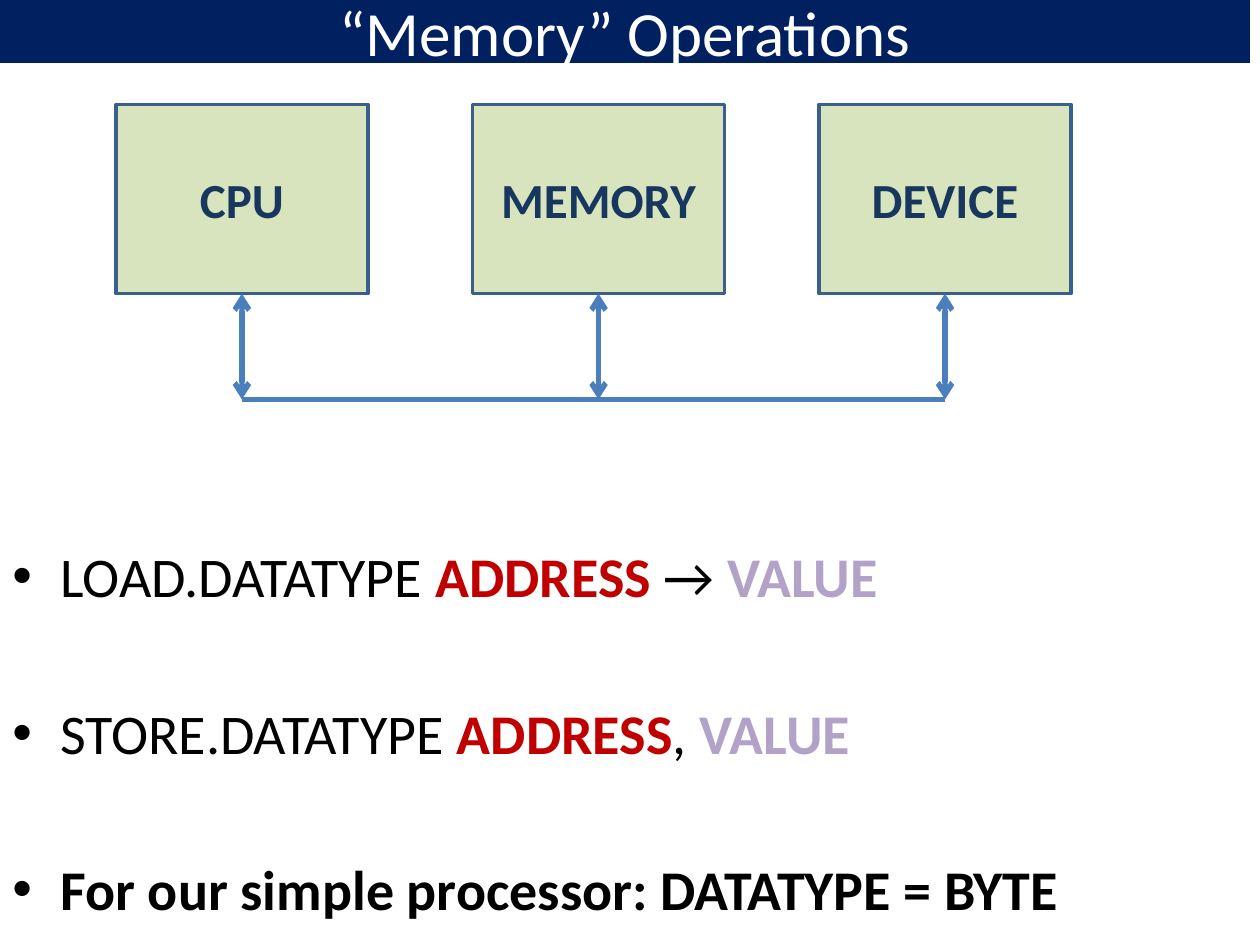
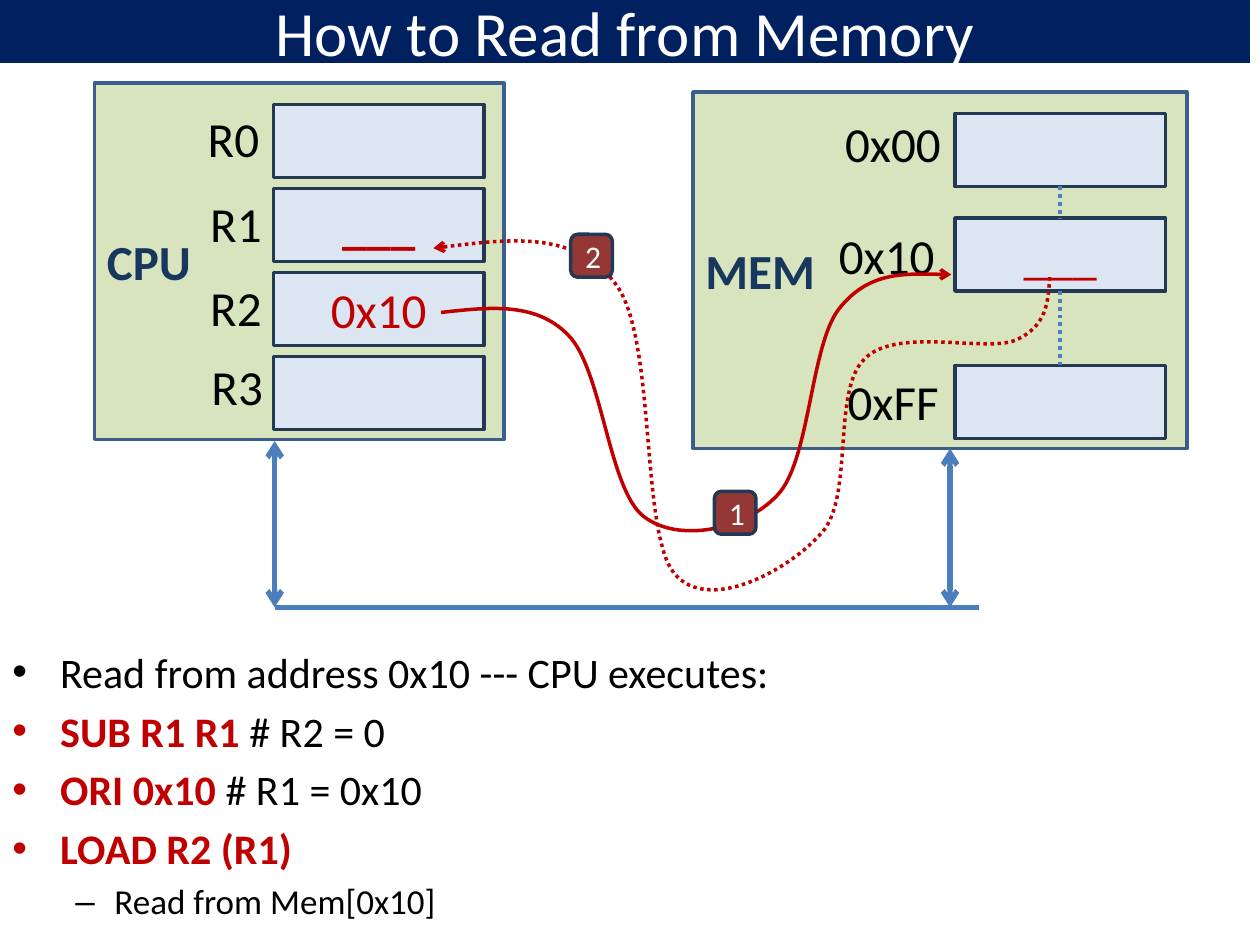
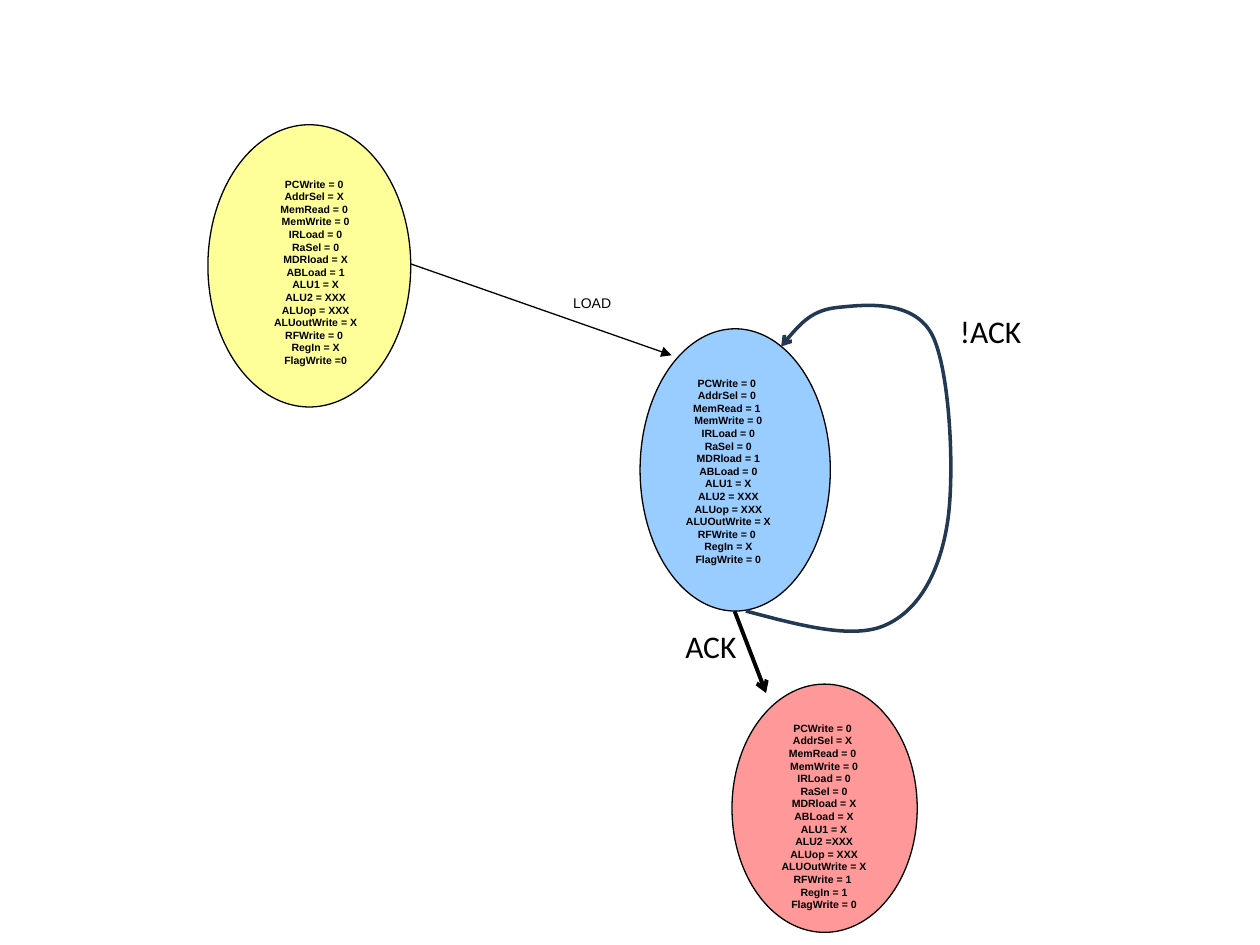
from dataclasses import dataclass
from typing import NamedTuple

from pptx import Presentation
from pptx.dml.color import RGBColor
from pptx.enum.dml import MSO_LINE
from pptx.enum.shapes import MSO_CONNECTOR, MSO_SHAPE
from pptx.enum.text import MSO_ANCHOR, MSO_AUTO_SIZE, PP_ALIGN
from pptx.oxml.ns import qn
from pptx.oxml.xmlchemy import OxmlElement
from pptx.util import Inches, Pt

NAVY = "002060"
GREEN = "D7E4BD"
EDGE = "3A5F8C"
INK = "17375E"
PALE = "DCE6F2"
DARK = "233953"
BLUE = "4B7EBC"
RED = "C00000"
MAROON = "953735"
LILAC = "B3A2C7"
BLACK = "000000"
WHITE = "FFFFFF"

TITLE_ONLY, BLANK = 5, 6
Point = tuple[float, float]


class Run(NamedTuple):
    text: str
    color: str = BLACK
    bold: bool = False


class Item(NamedTuple):
    runs: list[Run]
    size: float
    before: float = 0
    mark: str = "•"
    left: float = 0.38
    hang: float = 0.38


class Area(NamedTuple):
    left: float
    top: float
    width: float
    height: float

    def lengths(self) -> list[int]:
        return [Inches(v) for v in self]


class Look(NamedTuple):
    """Fill, outline and text style of a shape."""
    fill: str
    edge: str
    weight: float = 2
    size: float = 28
    align: PP_ALIGN = PP_ALIGN.CENTER
    kind: MSO_SHAPE = MSO_SHAPE.RECTANGLE


class Label(NamedTuple):
    area: Area
    text: str
    size: float = 28
    font: str = "Calibri"
    bold: bool = False
    align: PP_ALIGN = PP_ALIGN.LEFT


class Pen(NamedTuple):
    color: str = BLUE
    weight: float = 3
    head: str = ""
    tail: str = ""
    dotted: bool = False


@dataclass
class State:
    """One control state: its ellipse, its text box and its signal values."""
    area: Area
    note: Area
    fill: str
    values: str
    swaps: tuple[tuple[str, str], ...] = ()

    def text(self) -> str:
        text = SIGNALS.format(*self.values.split())
        for old, new in self.swaps:
            text = text.replace(old, new)
        return text


BLOCK = Look(GREEN, EDGE)
UNIT = Look(GREEN, EDGE, align=PP_ALIGN.LEFT)
CELL = Look(PALE, DARK)
BADGE = Look(MAROON, DARK, size=18, kind=MSO_SHAPE.ROUNDED_RECTANGLE)

BUS = Pen()
LINK = Pen(head="arrow", tail="arrow")
GAP = Pen(weight=2.25, dotted=True)

SIGNALS = "\n".join([
    "PCWrite = {} ", "AddrSel = {} ", "MemRead = {} ", "MemWrite = {}",
    "IRLoad = {}", "RaSel = {}", "MDRload = {}", "ABLoad = {}", "ALU1 = {}",
    "ALU2 = {}", "ALUop = {}", "ALUOutWrite = {}", "RFWrite = {} ",
    "RegIn = {}", "FlagWrite = {}",
])
READ = State(Area(5.08, 2.61, 1.51, 2.24), Area(5.12, 2.94, 1.32, 2.06),
             "99CCFF", "0 0 1 0 0 0 1 0 X XXX XXX X 0 X 0")
WRITE = State(Area(5.81, 5.43, 1.47, 1.97), Area(5.9, 5.68, 1.28, 1.81),
              "FF9999", "0 X 0 0 0 0 X X X XXX XXX X 1 1 0",
              (("ALU2 = ", "ALU2 ="),))
FETCH = State(Area(1.65, 0.99, 1.61, 2.24), Area(2.07, 1.36, 0.87, 1.62),
              "FFFF99", "0 X 0 0 0 0 X 1 X XXX XXX X 0 X 0",
              (("ALUOut", "ALUout"), ("FlagWrite = ", "FlagWrite =")))

ASK = [(3.5, 2.48),
       (3.87, 2.44), (4.25, 2.39), (4.51, 2.66),
       (4.78, 2.93), (4.83, 3.89), (5.11, 4.1),
       (5.38, 4.31), (5.91, 4.21), (6.17, 3.93),
       (6.43, 3.66), (6.43, 2.74), (6.66, 2.45),
       (6.89, 2.16), (7.22, 2.17), (7.55, 2.18)]
REPLY = [(8.33, 2.2),
         (8.32, 2.39), (8.31, 2.59), (8.06, 2.7),
         (7.82, 2.8), (7.11, 2.59), (6.86, 2.85),
         (6.6, 3.1), (6.78, 3.95), (6.52, 4.23),
         (6.27, 4.52), (5.62, 4.88), (5.35, 4.55),
         (5.08, 4.22), (5.21, 2.69), (4.89, 2.26),
         (4.57, 1.83), (4, 1.9), (3.44, 1.97)]
WAIT = [(5.92, 4.85),
        (6.34, 4.96), (6.77, 5.08), (7.03, 4.96),
        (7.3, 4.84), (7.46, 4.53), (7.52, 4.15),
        (7.58, 3.76), (7.54, 2.94), (7.4, 2.66),
        (7.25, 2.37), (6.85, 2.42), (6.65, 2.44),
        (6.45, 2.46), (6.32, 2.6), (6.2, 2.75)]


def rgb(color: str) -> RGBColor:
    return RGBColor.from_string(color)


def add_run(para, run: Run, size: float, font: str = "Calibri") -> None:
    part = para.add_run()
    part.text = run.text
    part.font.name = font
    part.font.size = Pt(size)
    part.font.bold = run.bold
    part.font.color.rgb = rgb(run.color)


def add_node(parent, tag: str, **attrs: str) -> None:
    node = OxmlElement(tag)
    for key, value in attrs.items():
        node.set(key, value)
    parent.append(node)


def ink(shape, pen: Pen) -> None:
    shape.line.color.rgb = rgb(pen.color)
    shape.line.width = Pt(pen.weight)
    if pen.dotted:
        shape.line.dash_style = MSO_LINE.ROUND_DOT
    stroke = shape.element.spPr.get_or_add_ln()
    for tag, tip in (("a:headEnd", pen.head), ("a:tailEnd", pen.tail)):
        if tip:
            add_node(stroke, tag, type=tip)


def add_box(slide, area: Area, look: Look, text: str = "",
            color: str = INK, bold: bool = False):
    shape = slide.shapes.add_shape(look.kind, *area.lengths())
    shape.shadow.inherit = False
    shape.fill.solid()
    shape.fill.fore_color.rgb = rgb(look.fill)
    ink(shape, Pen(look.edge, look.weight))
    if text:
        frame = shape.text_frame
        frame.vertical_anchor = MSO_ANCHOR.MIDDLE
        frame.paragraphs[0].alignment = look.align
        add_run(frame.paragraphs[0], Run(text, color, bold), look.size)
    return shape


def add_label(slide, label: Label) -> None:
    frame = slide.shapes.add_textbox(*label.area.lengths()).text_frame
    frame.word_wrap = False
    frame.auto_size = MSO_AUTO_SIZE.SHAPE_TO_FIT_TEXT
    for i, line in enumerate(label.text.split("\n")):
        para = frame.add_paragraph() if i else frame.paragraphs[0]
        para.alignment = label.align
        add_run(para, Run(line, bold=label.bold), label.size, label.font)


def add_line(slide, start: Point, end: Point, pen: Pen):
    line = slide.shapes.add_connector(
        MSO_CONNECTOR.STRAIGHT, *[Inches(v) for v in start + end])
    ink(line, pen)
    add_node(line.element.spPr, "a:effectLst")
    return line


def add_curve(slide, points: list[Point], pen: Pen) -> None:
    """Draw cubic curves: a start point, then three points for each curve."""
    start, *rest = [(Inches(x), Inches(y)) for x, y in points]
    maker = slide.shapes.build_freeform(*start)
    maker.add_line_segments(rest, close=False)
    shape = maker.convert_to_shape()
    steps = list(shape.element.iter(qn("a:lnTo")))
    for i in range(0, len(steps), 3):
        curve = OxmlElement("a:cubicBezTo")
        steps[i].addprevious(curve)
        for step in steps[i:i + 3]:
            curve.append(step[0])
            step.getparent().remove(step)
    shape.shadow.inherit = False
    shape.fill.background()
    ink(shape, pen)


def add_list(slide, area: Area, items: list[Item]) -> None:
    frame = slide.shapes.add_textbox(*area.lengths()).text_frame
    frame.word_wrap = True
    for i, item in enumerate(items):
        para = frame.add_paragraph() if i else frame.paragraphs[0]
        para.space_before = Pt(item.before)
        props = para._p.get_or_add_pPr()
        props.set("marL", str(Inches(item.left)))
        props.set("indent", str(-Inches(item.hang)))
        add_node(props, "a:buFont", typeface="Arial")
        add_node(props, "a:buChar", char=item.mark)
        for run in item.runs:
            add_run(para, run, item.size)


def add_titled(deck, text: str):
    slide = deck.slides.add_slide(deck.slide_layouts[TITLE_ONLY])
    title = slide.shapes.title
    title.left, title.top, title.width, title.height = Area(
        0, 0, 9.92, 0.5).lengths()
    title.fill.solid()
    title.fill.fore_color.rgb = rgb(NAVY)
    frame = title.text_frame
    frame.auto_size = MSO_AUTO_SIZE.NONE
    frame.vertical_anchor = MSO_ANCHOR.MIDDLE
    frame.paragraphs[0].alignment = PP_ALIGN.CENTER
    add_run(frame.paragraphs[0], Run(text, WHITE), 36)
    return slide


def add_state(slide, state: State) -> None:
    add_box(slide, state.area,
            Look(state.fill, BLACK, 0.75, kind=MSO_SHAPE.OVAL))
    add_label(slide, Label(state.note, state.text(), 6, "Arial", True,
                           PP_ALIGN.CENTER))


def show_memory(deck) -> None:
    slide = add_titled(deck, "“Memory” Operations")
    address, value = Run("ADDRESS", RED, True), Run("VALUE", LILAC, True)
    add_list(slide, Area(0, 4.25, 10, 3.25), [
        Item([Run("LOAD.DATATYPE "), Run("ADDRESS ", RED, True),
              Run("→ "), value], 32),
        Item([Run("STORE.DATATYPE "), address, Run(", "), value], 32, 51),
        Item([Run("For our simple processor: DATATYPE = BYTE", bold=True)],
             32, 51),
    ])
    floor = 3.17
    add_line(slide, (1.92, floor), (7.5, floor), BUS)
    for name, left in (("CPU", 0.92), ("MEMORY", 3.75), ("DEVICE", 6.5)):
        box = add_box(slide, Area(left, 0.83, 2, 1.5), BLOCK, name, bold=True)
        link = add_line(slide, (left + 1, 2.33), (left + 1, floor), LINK)
        link.begin_connect(box, 2)


def show_read(deck) -> None:
    slide = add_titled(deck, "How to Read from Memory")
    add_list(slide, Area(0, 5.08, 10, 3.24), [
        Item([Run("Read from address 0x10 --- CPU executes:")], 24),
        Item([Run("SUB R1 R1 ", RED, True), Run("# R2 = 0")], 24, 4.8),
        Item([Run("ORI 0x10 ", RED, True), Run("# R1 = 0x10")], 24, 4.8),
        Item([Run("LOAD R2 (R1)", RED, True)], 24, 4.8),
        Item([Run("Read from Mem[0x10]")], 20, 4, "–", 0.81, 0.31),
    ])

    add_box(slide, Area(0.75, 0.66, 3.25, 2.83), UNIT, "CPU", bold=True)
    for i, text in enumerate(("", "___", "0x10", "")):
        add_box(slide, Area(2.17, 0.83 + i * 2 / 3, 1.67, 0.58), CELL, text,
                RED, text == "___")
    for i, (left, top) in enumerate(
            ((1.55, 0.81), (1.57, 1.49), (1.57, 2.15), (1.58, 2.78))):
        add_label(slide, Label(Area(left, top, 0.62, 0.57), f"R{i}"))

    add_box(slide, Area(5.5, 0.73, 3.92, 2.83), UNIT, "MEM", bold=True)
    cells = [add_box(slide, Area(7.58, top, 1.67, 0.58), CELL, text, RED)
             for top, text in ((0.9, ""), (1.73, "___"), (2.9, ""))]
    for text, area in (("0x00", Area(6.61, 0.85, 0.97, 0.57)),
                       ("0x10", Area(6.56, 1.74, 0.97, 0.57)),
                       ("0xFF", Area(6.63, 2.9, 0.93, 0.57))):
        add_label(slide, Label(area, text))
    for upper, lower in zip(cells, cells[1:]):
        gap = add_line(slide, (8.42, 1.48), (8.42, 1.73), GAP)
        gap.begin_connect(upper, 2)
        gap.end_connect(lower, 0)

    add_curve(slide, ASK, Pen(RED, 2, tail="arrow"))
    add_curve(slide, REPLY, Pen(RED, 2, tail="arrow", dotted=True))
    for text, left, top in (("1", 5.67, 3.9), ("2", 4.53, 1.86)):
        add_box(slide, Area(left, top, 0.33, 0.34), BADGE, text, WHITE)

    floor = 4.82
    add_line(slide, (2.18, floor), (7.77, floor), BUS)
    for x, top in ((2.18, 3.5), (7.54, 3.56)):
        add_line(slide, (x, top), (x, floor), LINK)


def show_states(deck) -> None:
    slide = deck.slides.add_slide(deck.slide_layouts[BLANK])
    add_state(slide, READ)
    add_line(slide, (3.19, 2.07), (5.33, 2.82),
             Pen(BLACK, 0.75, tail="triangle"))
    add_line(slide, (5.83, 4.85), (6.08, 5.5), Pen(BLACK, 2.25, tail="arrow"))
    add_curve(slide, WAIT, Pen(DARK, 2, tail="arrow"))
    add_label(slide, Label(Area(4.32, 2.29, 0.76, 0.3), "LOAD", 8, "Arial",
                           align=PP_ALIGN.CENTER))
    add_label(slide, Label(Area(7.52, 2.43, 0.69, 0.4), "!ACK", 18))
    add_label(slide, Label(Area(5.34, 4.93, 0.61, 0.4), "ACK", 18))
    add_state(slide, WRITE)
    add_state(slide, FETCH)


def main() -> None:
    deck = Presentation()
    deck.slide_width, deck.slide_height = Inches(10), Inches(7.5)
    show_memory(deck)
    show_read(deck)
    show_states(deck)
    deck.save("out.pptx")


if __name__ == "__main__":
    main()
